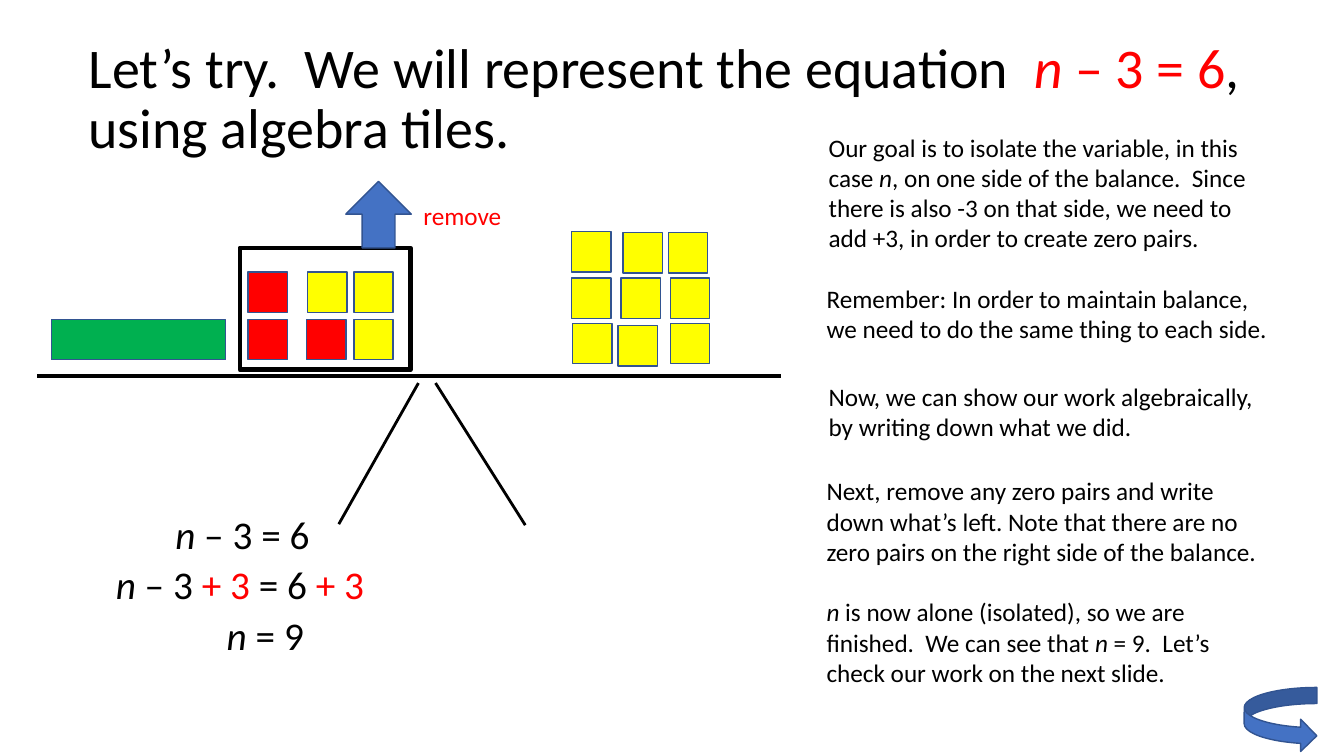
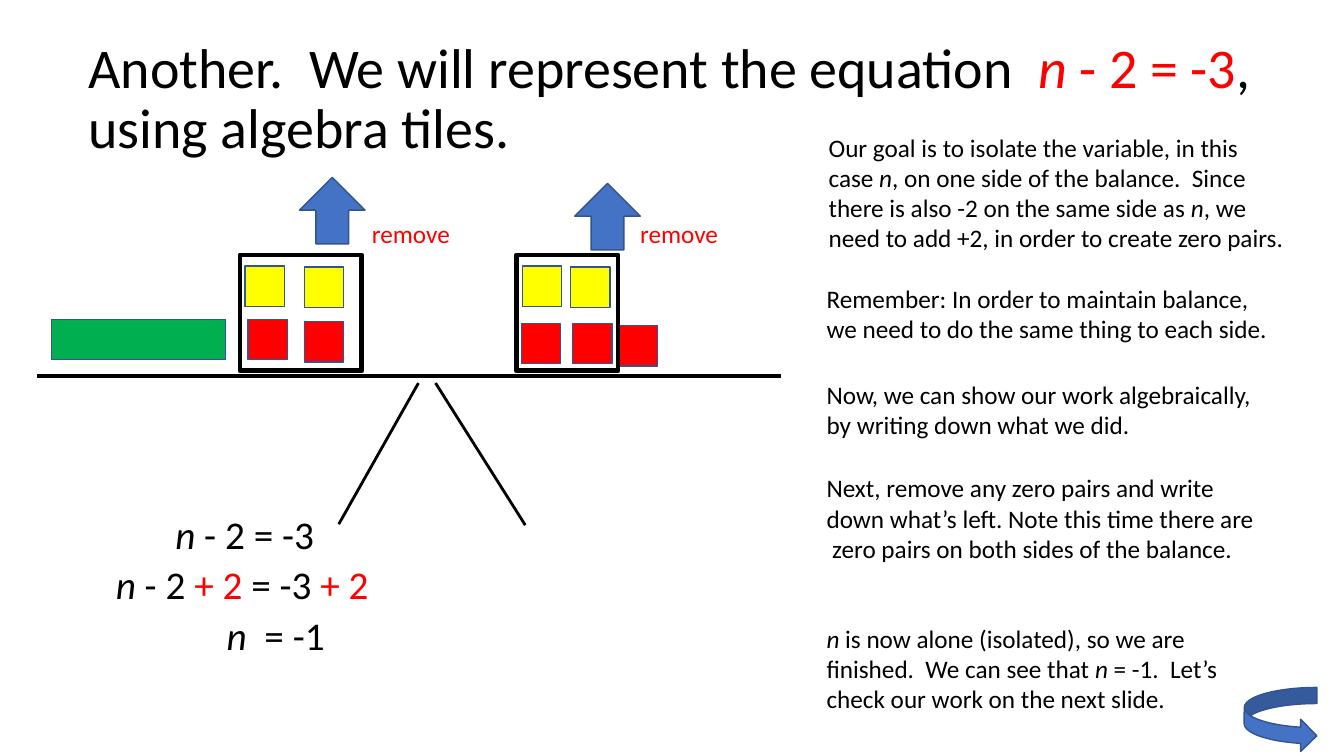
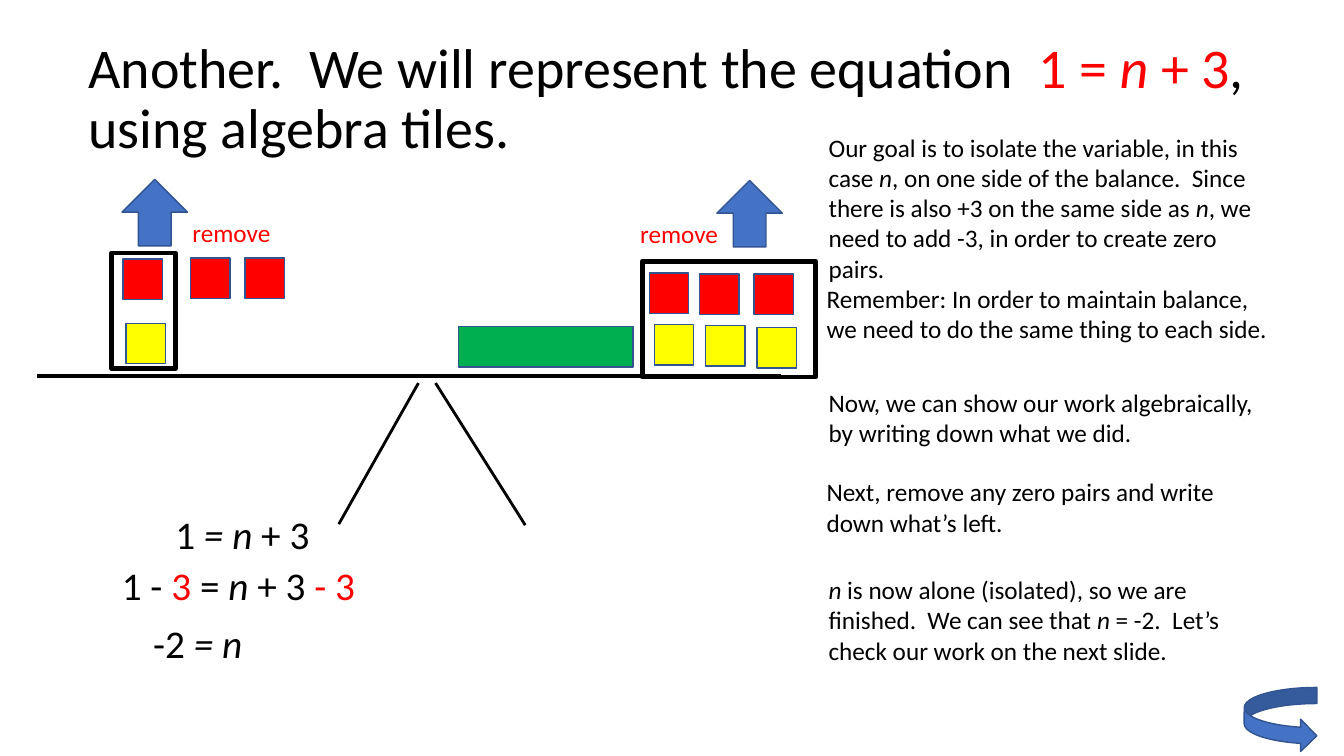
from lxml import etree
from pptx import Presentation
from pptx.dml.color import RGBColor
from pptx.enum.shapes import MSO_CONNECTOR, MSO_SHAPE
from pptx.enum.text import MSO_ANCHOR, MSO_AUTO_SIZE, PP_ALIGN
from pptx.oxml.ns import qn
from pptx.util import Inches, Pt

RECT, UP_ARROW, TURN_ARROW = MSO_SHAPE.RECTANGLE, MSO_SHAPE.UP_ARROW, MSO_SHAPE.CURVED_RIGHT_ARROW
STRAIGHT = MSO_CONNECTOR.STRAIGHT
TOP, MIDDLE = MSO_ANCHOR.TOP, MSO_ANCHOR.MIDDLE
GROW, LEFT = MSO_AUTO_SIZE.SHAPE_TO_FIT_TEXT, PP_ALIGN.LEFT

FONT = "Calibri"
BLACK, RED, YELLOW, GREEN = "000000", "FF0000", "FFFF00", "00B050"
BLUE, OUTLINE = "4472C4", "325491"

TILE = (0.39, 0.4)
BAR = (1.73, 0.4)
ARROW = (0.65, 0.66)
BALANCE = [
    (0.37, 3.73, 7.75, 3.73, 3.25),
    (3.36, 5.2, 4.15, 3.8, 2),
    (4.32, 3.8, 5.21, 5.21, 2),
]

# Markup: *italic*, ~red~
TITLE = "{}  We will represent the equation  ~{}~, using algebra tiles."
GOAL = ("Our goal is to isolate the variable, in this case *n*, on one side of the balance.  "
        "Since there is also {} on {}, we need to add {}, in order to create zero pairs.")
REMEMBER = "Remember: In order to maintain balance, we need to do the same thing to each side."
SHOW = "Now, we can show our work algebraically, by writing down what we did."
NEXT = "Next, remove any zero pairs and write down what’s left."
DONE = ("*n* is now alone (isolated), so we are finished.  We can see that *n* = {}.  "
        "Let’s check our work on the next slide.")
SAME_SIDE = "the same side as *n*"

SLIDES = [
    {
        "title": ("Let’s try.", "*n* – 3 = 6"),
        "bar": (0.51, 3.17),
        "red": [(2.46, 3.17), (2.46, 2.7), (3.04, 3.17)],
        "yellow": [(5.68, 3.21), (6.13, 3.23), (6.65, 3.21),
                   (5.67, 2.76), (6.16, 2.76), (6.65, 2.76),
                   (5.67, 2.3), (6.18, 2.31), (6.63, 2.31),
                   (3.05, 2.7), (3.51, 2.7), (3.51, 3.17)],
        "frames": [(2.38, 2.46, 1.69, 1.21)],
        "arrows": [(3.43, 1.8)],
        "removes": [(4.1, 1.94)],
        "steps": [(1.64, 5.01, "*n* – 3 = 6"),
                  (1.05, 5.51, "*n* – 3 ~+ 3 ~= 6 ~+ 3~"),
                  (2.15, 6.02, "*n* = 9")],
        "notes": [(8.12, 1.26, 4.44, 4, GOAL.format("-3", "that side", "+3")),
                  (8.1, 2.76, 4.65, 2, REMEMBER),
                  (8.12, 3.73, 4.44, 2, SHOW),
                  (8.1, 4.67, 4.57, 3, NEXT + " Note that there are no zero pairs "
                                              "on the right side of the balance."),
                  (8.1, 5.87, 4.44, 3, DONE.format("9"))],
    },
    {
        "title": ("Another.", "*n* - 2 = -3"),
        "bar": (0.51, 3.17),
        "red": [(2.46, 3.17), (3.02, 3.19), (5.17, 3.21), (5.68, 3.21), (6.13, 3.23)],
        "yellow": [(2.43, 2.64), (3.02, 2.65), (5.18, 2.64), (5.66, 2.65)],
        "frames": [(2.38, 2.53, 1.21, 1.15), (5.12, 2.53, 1.01, 1.15)],
        "arrows": [(2.97, 1.76), (5.7, 1.82)],
        "removes": [(3.59, 2.12), (6.25, 2.12)],
        "steps": [(1.64, 5.01, "*n* - 2 = -3"),
                  (1.05, 5.51, "*n* - 2 ~+ 2 ~= -3 ~+ 2~"),
                  (2.15, 6.02, "*n*  = -1")],
        "notes": [(8.12, 1.26, 4.76, 4, GOAL.format("-2", SAME_SIDE, "+2")),
                  (8.1, 2.76, 4.68, 2, REMEMBER),
                  (8.1, 3.71, 4.44, 2, SHOW),
                  (8.1, 4.64, 4.44, 4, NEXT + " Note this time there are  zero pairs "
                                              "on both sides of the balance."),
                  (8.1, 6.13, 4.44, 3, DONE.format("-1"))],
    },
    {
        "title": ("Another.", "1 = *n* + 3"),
        "bar": (4.55, 3.24),
        "red": [(1.22, 2.57), (1.89, 2.56), (2.43, 2.56), (6.44, 2.71), (6.94, 2.72), (7.48, 2.72)],
        "yellow": [(1.25, 3.21), (6.49, 3.22), (7, 3.23), (7.51, 3.25)],
        "frames": [(6.37, 2.59, 1.72, 1.15), (1.11, 2.51, 0.63, 1.15)],
        "arrows": [(1.21, 1.78), (7.11, 1.79)],
        "removes": [(1.81, 2.11), (6.25, 2.12)],
        "steps": [(1.64, 5.01, "1* = n* + 3"),
                  (1.11, 5.52, "1 - ~3 ~= *n* + 3 ~- 3~"),
                  (1.42, 6.09, "-2 *= n*")],
        "notes": [(8.12, 1.26, 4.44, 5, GOAL.format("+3", SAME_SIDE, "-3")),
                  (8.1, 2.76, 4.62, 2, REMEMBER),
                  (8.12, 3.79, 4.44, 2, SHOW),
                  (8.1, 4.68, 4.44, 2, NEXT),
                  (8.12, 5.65, 4.44, 3, DONE.format("-2"))],
    },
]


def rgb(value):
    return RGBColor.from_string(value)


def add_text(s, box, text, size, anchor=TOP, spacing=None):
    tf = s.shapes.add_textbox(*map(Inches, box)).text_frame
    tf.word_wrap = True
    tf.vertical_anchor = anchor
    if anchor == TOP:
        tf.auto_size = GROW
    p = tf.paragraphs[0]
    p.alignment = LEFT
    if spacing:
        p.line_spacing = spacing
    for i, part in enumerate(text.split("~")):
        for j, words in enumerate(part.split("*")):
            if words:
                r = p.add_run()
                r.text = words
                r.font.name = FONT
                r.font.size = Pt(size)
                r.font.italic = j % 2 == 1
                r.font.color.rgb = rgb(RED if i % 2 else BLACK)


def add_box(s, kind, box, fill=None, line=OUTLINE, width=1):
    sp = s.shapes.add_shape(kind, *map(Inches, box))
    sp.shadow.inherit = False
    if fill:
        sp.fill.solid()
        sp.fill.fore_color.rgb = rgb(fill)
    else:
        sp.fill.background()
    sp.line.color.rgb = rgb(line)
    sp.line.width = Pt(width)


def add_line(s, x1, y1, x2, y2, width):
    c = s.shapes.add_connector(STRAIGHT, *map(Inches, (x1, y1, x2, y2)))
    c.line.color.rgb = rgb(BLACK)
    c.line.width = Pt(width)
    etree.SubElement(c._element.spPr, qn("a:effectLst"))


def build_slide(prs, data):
    s = prs.slides.add_slide(prs.slide_layouts[6])
    add_text(s, (0.78, 0.27, 11.78, 1.45), TITLE.format(*data["title"]), 40, MIDDLE, 0.9)
    for line in BALANCE:
        add_line(s, *line)
    add_box(s, RECT, data["bar"] + BAR, GREEN)
    for key, color in (("red", RED), ("yellow", YELLOW)):
        for spot in data[key]:
            add_box(s, RECT, spot + TILE, color)
    for frame in data["frames"]:
        add_box(s, RECT, frame, None, BLACK, 3.5)
    for spot in data["arrows"]:
        add_box(s, UP_ARROW, spot + ARROW, BLUE)
    for spot in data["removes"]:
        add_text(s, spot + (1.01, 0.4), "~remove~", 18)
    for x, y, text in data["steps"]:
        add_text(s, (x, y, 3.2, 0.57), text, 28)
    for x, y, w, lines, text in data["notes"]:
        add_text(s, (x, y, w, 0.1 + 0.3 * lines), text, 18)
    add_box(s, TURN_ARROW, (12.34, 6.82, 0.72, 0.64), BLUE)


def main():
    prs = Presentation()
    prs.slide_width, prs.slide_height = Inches(13.33), Inches(7.5)
    for data in SLIDES:
        build_slide(prs, data)
    prs.save("out.pptx")


if __name__ == "__main__":
    main()
